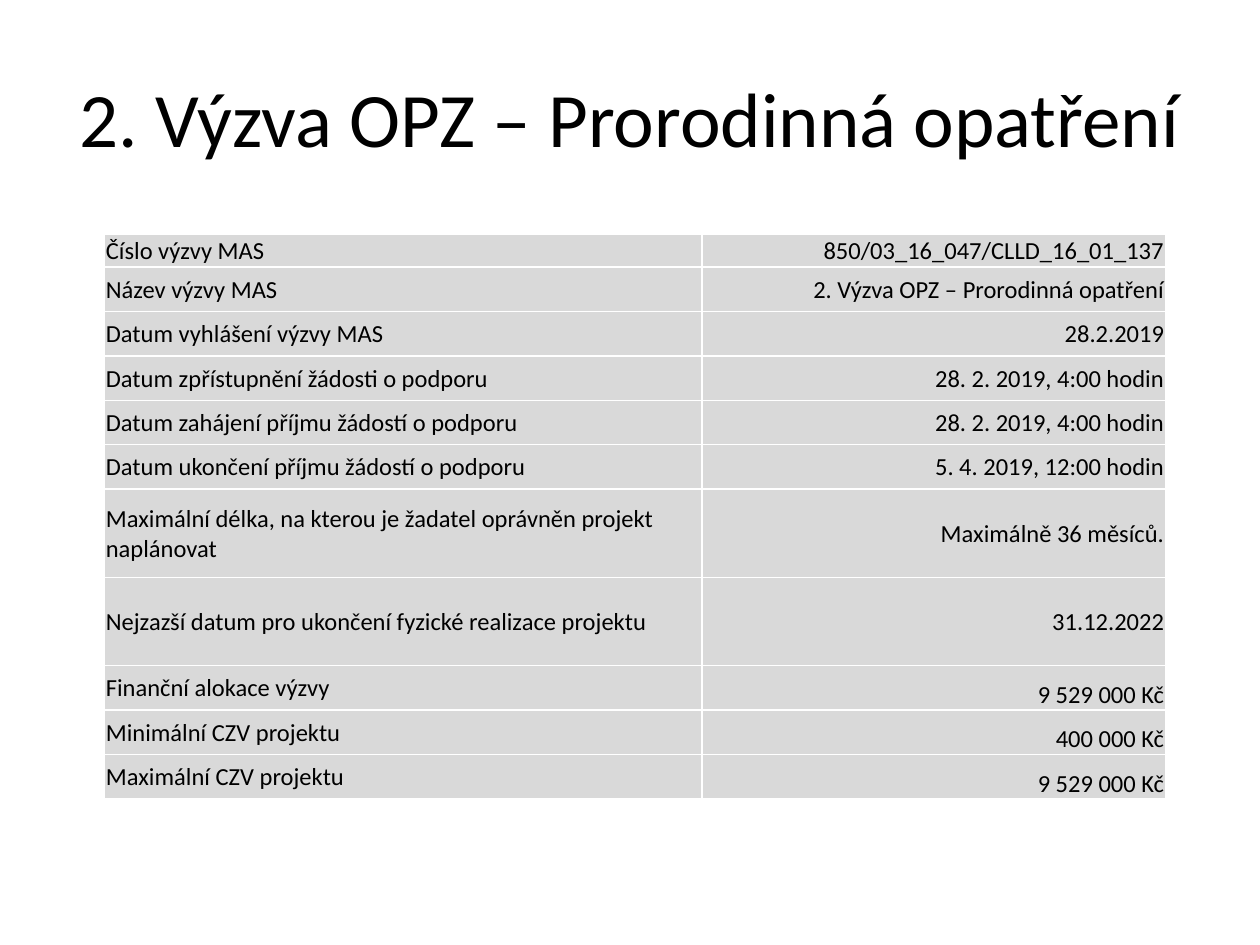
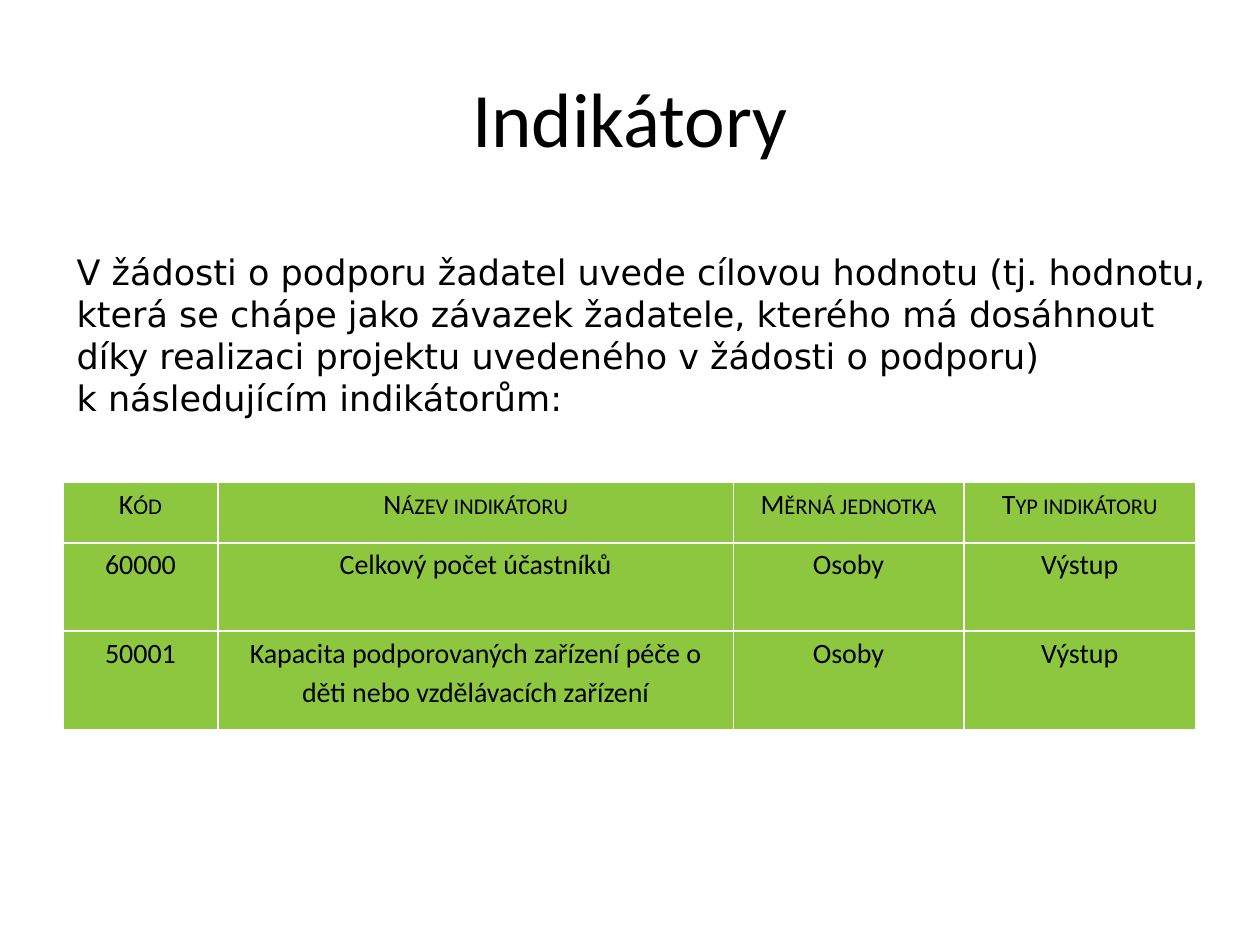
import pptx
import pptx.util
import pptx.dml.color
import pptx.enum.text
import lxml.etree
from pptx.oxml.ns import qn

Inches = pptx.util.Inches
Pt = pptx.util.Pt
ALIGN = pptx.enum.text.PP_ALIGN
ANCHOR = pptx.enum.text.MSO_ANCHOR

COLORS = {"text": "000000", "border": "FFFFFF", "call": "D9D9D9", "indicator": "8DC63F"}
TITLE_FONT = TABLE_FONT = "Calibri"
BODY_FONT = "DejaVu Sans"


def style_text(frame, size, font, align):
    for paragraph in frame.paragraphs:
        paragraph.alignment = align
        for run in paragraph.runs:
            run.font.size = Pt(size)
            run.font.name = font
            run.font.bold = False
            run.font.color.rgb = pptx.dml.color.RGBColor.from_string(COLORS["text"])


def style_cell(cell, fill, margins):
    """Give the cell thin borders, a solid fill and left, top, right, bottom margins."""
    cell_properties = cell._tc.get_or_add_tcPr()
    for side in ("lnL", "lnR", "lnT", "lnB"):
        border = lxml.etree.SubElement(cell_properties, qn(f"a:{side}"), w=str(Pt(1)))
        solid = lxml.etree.SubElement(border, qn("a:solidFill"))
        lxml.etree.SubElement(solid, qn("a:srgbClr"), val=COLORS["border"])
    cell.fill.solid()
    cell.fill.fore_color.rgb = pptx.dml.color.RGBColor.from_string(COLORS[fill])
    cell.margin_left, cell.margin_top, cell.margin_right, cell.margin_bottom = map(Inches, margins)


presentation = pptx.Presentation()
presentation.slide_width = Inches(10)
presentation.slide_height = Inches(7.5)

slides = []
for heading in ("2. Výzva OPZ – Prorodinná opatření", "Indikátory"):
    slide = presentation.slides.add_slide(presentation.slide_layouts[5])
    title = slide.shapes.title
    title.left, title.top, title.width, title.height = map(Inches, (0.5, 0.3, 9, 1.25))
    title.text_frame.text = heading
    title.text_frame.vertical_anchor = ANCHOR.MIDDLE
    style_text(title.text_frame, 44, TITLE_FONT, ALIGN.CENTER)
    slides.append(slide)
call_slide, indicator_slide = slides

# Call details
call_details = [
    ("Číslo výzvy MAS", "850/03_16_047/CLLD_16_01_137"),
    ("Název výzvy MAS", "2. Výzva OPZ – Prorodinná opatření"),
    ("Datum vyhlášení výzvy MAS", "28.2.2019"),
    ("Datum zpřístupnění žádosti o podporu", "28. 2. 2019, 4:00 hodin"),
    ("Datum zahájení příjmu žádostí o podporu", "28. 2. 2019, 4:00 hodin"),
    ("Datum ukončení příjmu žádostí o podporu", "5. 4. 2019, 12:00 hodin"),
    ("Maximální délka, na kterou je žadatel oprávněn projekt naplánovat", "Maximálně 36 měsíců."),
    ("Nejzazší datum pro ukončení fyzické realizace projektu", "31.12.2022"),
    ("Finanční alokace výzvy", "9 529 000 Kč"),
    ("Minimální CZV projektu", "400 000 Kč"),
    ("Maximální CZV projektu", "9 529 000 Kč"),
]
call_height, first_height, tall_height = 4.48, 0.26, 0.7
tall_rows = (6, 7)
regular_height = (call_height - first_height - 2 * tall_height) / (len(call_details) - 3)

call_table = call_slide.shapes.add_table(
    len(call_details), 2, Inches(0.83), Inches(1.86), Inches(8.42), Inches(call_height)).table
call_table.columns[0].width = Inches(4.74)
call_table.columns[1].width = Inches(3.68)
for row, detail in enumerate(call_details):
    height = first_height if row == 0 else tall_height if row in tall_rows else regular_height
    call_table.rows[row].height = Inches(height)
    for column, content in enumerate(detail):
        cell = call_table.cell(row, column)
        cell.text_frame.text = content
        style_text(cell.text_frame, 14, TABLE_FONT, ALIGN.RIGHT if column else ALIGN.LEFT)
        style_cell(cell, "call", (0.01, 0.01, 0.01, 0))
        is_amount = column == 1 and content.endswith("Kč")
        cell.vertical_anchor = ANCHOR.BOTTOM if is_amount else ANCHOR.MIDDLE

# Indicators
indicators = [
    ("Kód", "Název indikátoru", "Měrná jednotka", "Typ indikátoru"),
    ("60000", "Celkový počet účastníků", "Osoby", "Výstup"),
    ("50001", "Kapacita podporovaných zařízení péče o děti nebo vzdělávacích zařízení",
     "Osoby", "Výstup"),
]
indicator_table = indicator_slide.shapes.add_table(
    3, 4, Inches(0.5), Inches(3.83), Inches(9), Inches(1.96)).table
for column, width in enumerate((1.23, 4.09, 1.83, 1.84)):
    indicator_table.columns[column].width = Inches(width)
for row, (height, indicator) in enumerate(zip((0.48, 0.7, 0.78), indicators)):
    indicator_table.rows[row].height = Inches(height)
    for column, content in enumerate(indicator):
        cell = indicator_table.cell(row, column)
        cell.text_frame.text = content
        style_text(cell.text_frame, 16, TABLE_FONT, ALIGN.CENTER)
        style_cell(cell, "indicator", (0.07, 0, 0.07, 0))
        paragraph = cell.text_frame.paragraphs[0]
        paragraph.line_spacing = 1.15
        paragraph.space_after = Pt(6)
        if row == 0:
            paragraph.space_before = paragraph.space_after = Pt(3)
            paragraph.runs[0].font._element.set("cap", "small")

introduction = indicator_slide.shapes.add_textbox(
    Inches(0.51), Inches(1.94), Inches(9.3), Inches(1.75)).text_frame
introduction.word_wrap = False
introduction.text = "\n".join((
    "V žádosti o podporu žadatel uvede cílovou hodnotu (tj. hodnotu,",
    "která se chápe jako závazek žadatele, kterého má dosáhnout",
    "díky realizaci projektu uvedeného v žádosti o podporu)",
    "k následujícím indikátorům:",
))
style_text(introduction, 20, BODY_FONT, ALIGN.LEFT)

presentation.save("out.pptx")
